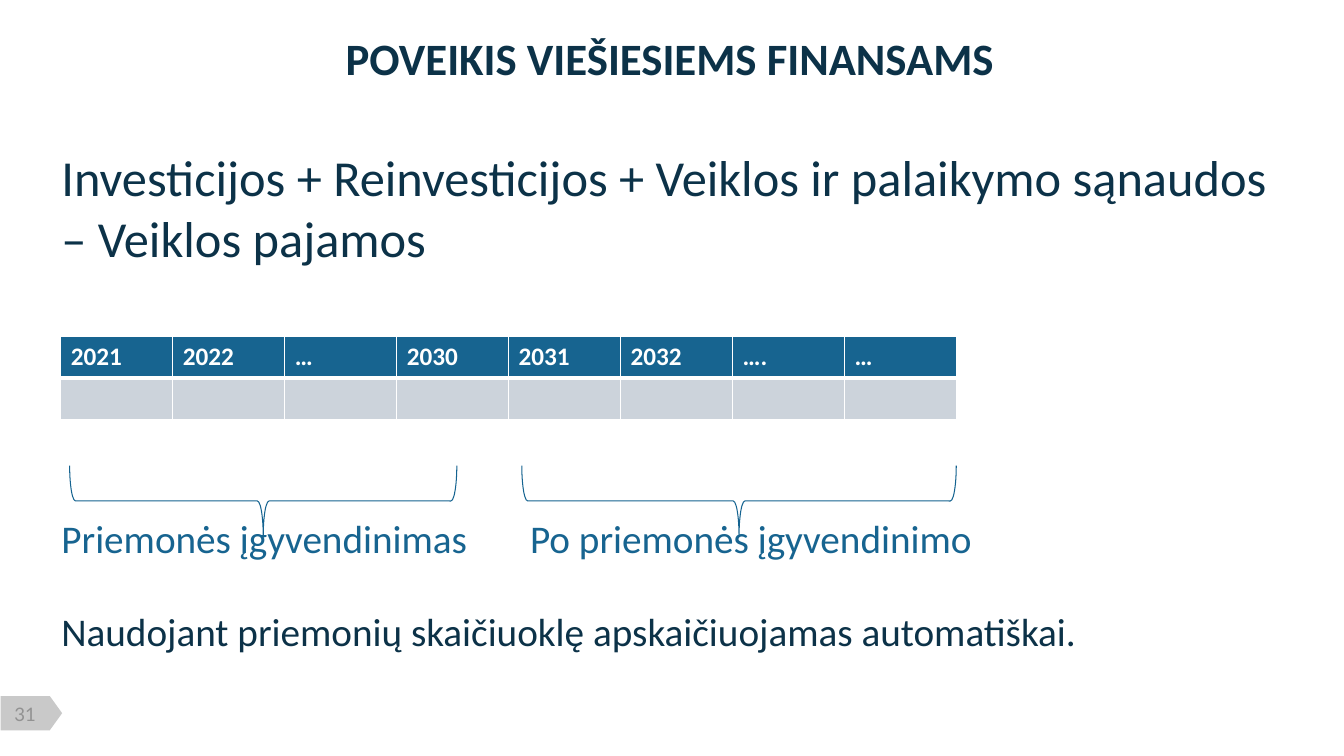
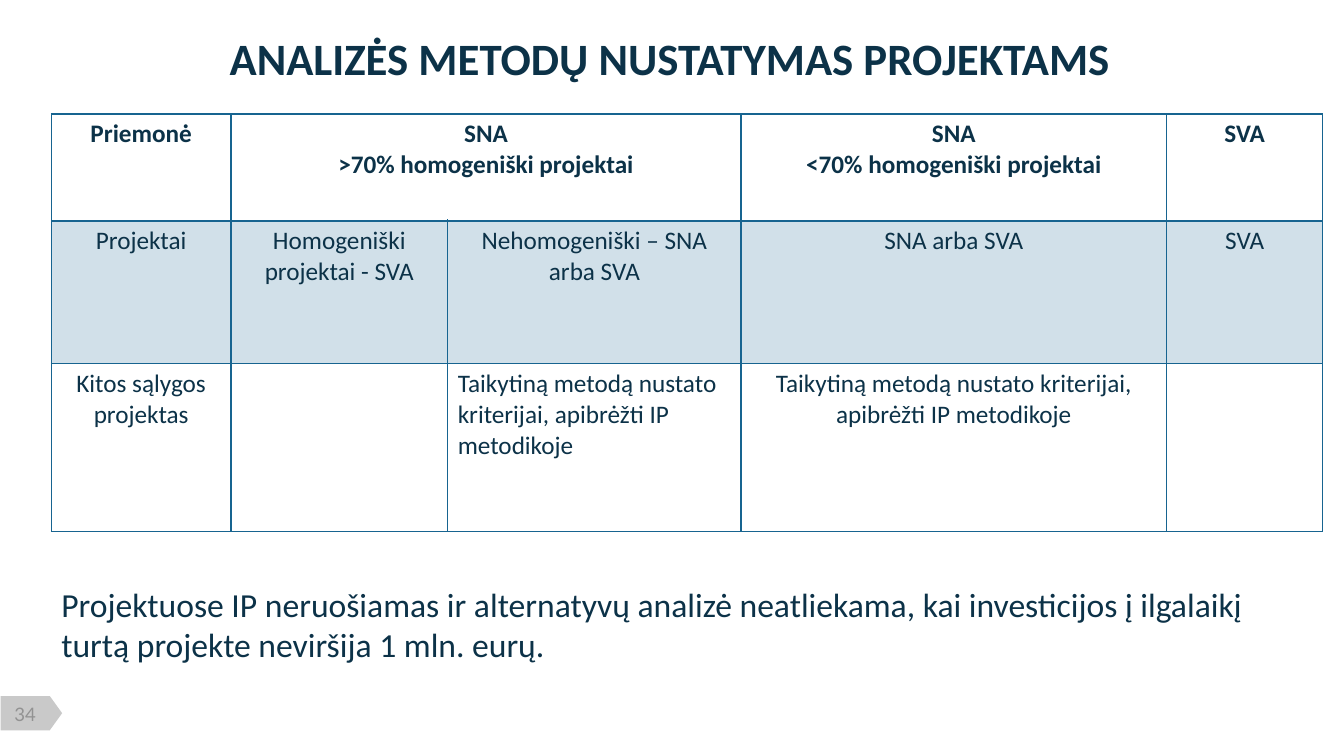
import dataclasses
import typing

import lxml.etree
import pptx
import pptx.dml.color
import pptx.enum.shapes
import pptx.enum.text
import pptx.oxml.ns
import pptx.slide
import pptx.table
import pptx.text.text
import pptx.util

WIDTH = pptx.util.Inches(13.33)
HEIGHT = pptx.util.Inches(7.5)

COLOURS = {
    "navy": "0C3248",
    "blue": "176490",
    "brace": "146390",
    "tint": "D1E0E9",
    "empty": "CCD3DB",
    "badge": "C9C9C9",
    "number": "929292",
    "white": "FFFFFF",
}

LEFT = pptx.enum.text.PP_ALIGN.LEFT
CENTER = pptx.enum.text.PP_ALIGN.CENTER
SHAPES = pptx.enum.shapes.MSO_SHAPE

# Shared left edge, text width and text height, in percent of the slide
MARGIN, TEXT_WIDTH, TEXT_HEIGHT = 3.83, 92.05, 11.47


class Area(typing.NamedTuple):
    """Left, top, width and height in percent of the slide's size."""
    left: float
    top: float
    width: float
    height: float

    def lengths(self) -> tuple[int, int, int, int]:
        return (across(self.left), down(self.top), across(self.width), down(self.height))


@dataclasses.dataclass(frozen=True)
class Style:
    size: float
    colour: str = "navy"
    bold: bool = False
    name: str = "Calibri"
    align: pptx.enum.text.PP_ALIGN = LEFT


@dataclasses.dataclass(frozen=True)
class Cell:
    text: str = ""
    span: int = 1
    align: pptx.enum.text.PP_ALIGN = CENTER


@dataclasses.dataclass(frozen=True)
class Row:
    height: float
    cells: list[Cell]
    colour: str = "navy"
    bold: bool = False
    fill: str | None = None


@dataclasses.dataclass(frozen=True)
class Grid:
    left: float
    top: float
    columns: list[float]
    rows: list[Row]
    border: str
    heavy: float


@dataclasses.dataclass(frozen=True)
class Phase:
    label: str
    label_left: float
    brace_left: float
    brace_width: float


TITLE = Style(32, bold=True, align=CENTER)
NUMBER = Style(13.3, "number", name="Lato", align=CENTER)


def across(share: float) -> int:
    return round(WIDTH * share / 100)


def down(share: float) -> int:
    return round(HEIGHT * share / 100)


def colour_of(name: str) -> pptx.dml.color.RGBColor:
    return pptx.dml.color.RGBColor.from_string(COLOURS[name])


def write(frame: pptx.text.text.TextFrame, text: str, style: Style) -> None:
    values = {"size": pptx.util.Pt(style.size), "bold": style.bold, "name": style.name}
    for index, line in enumerate(text.split("\n")):
        para = frame.add_paragraph() if index else frame.paragraphs[0]
        para.alignment = style.align
        if not line:
            para.font.size = values["size"]
            continue
        span = para.add_run()
        span.text = line
        for name, value in values.items():
            setattr(span.font, name, value)
        span.font.color.rgb = colour_of(style.colour)


def add_text(page: pptx.slide.Slide, area: Area, text: str, style: Style,
             **frame_values: typing.Any) -> None:
    frame = page.shapes.add_textbox(*area.lengths()).text_frame
    for name, value in ({"word_wrap": True} | frame_values).items():
        setattr(frame, name, value)
    write(frame, text, style)


def add_turned(page: pptx.slide.Slide, kind: SHAPES, area: Area, rotation: int,
               fill: str | None = None, line: str | None = None) -> None:
    """Draw a shape turned by a quarter so that it covers the area."""
    left, top, width, height = area.lengths()
    shift = (width - height) // 2
    shape = page.shapes.add_shape(kind, left + shift, top - shift, height, width)
    shape.rotation = rotation
    shape.shadow.inherit = False
    if fill:
        shape.fill.solid()
        shape.fill.fore_color.rgb = colour_of(fill)
    else:
        shape.fill.background()
    if line:
        shape.line.color.rgb = colour_of(line)
        shape.line.width = pptx.util.Pt(0.75)
    else:
        shape.line.fill.background()


def set_borders(cell: pptx.table._Cell, colour: str, widths: dict[str, float]) -> None:
    properties = cell._tc.get_or_add_tcPr()
    for side, width in widths.items():
        line = lxml.etree.SubElement(properties, pptx.oxml.ns.qn(f"a:ln{side}"),
                                     w=str(pptx.util.Pt(width)))
        solid = lxml.etree.SubElement(line, pptx.oxml.ns.qn("a:solidFill"))
        lxml.etree.SubElement(solid, pptx.oxml.ns.qn("a:srgbClr"), val=COLOURS[colour])


def add_grid(page: pptx.slide.Slide, grid: Grid) -> None:
    area = Area(grid.left, grid.top, sum(grid.columns), sum(row.height for row in grid.rows))
    table = page.shapes.add_table(len(grid.rows), len(grid.columns), *area.lengths()).table
    table.horz_banding = False
    for column, width in zip(table.columns, grid.columns):
        column.width = across(width)
    for index, row in enumerate(grid.rows):
        table.rows[index].height = down(row.height)
        # The rule under the header is heavier than the others
        widths = {"L": 1, "R": 1, "T": grid.heavy if index == 1 else 1,
                  "B": grid.heavy if index == 0 else 1}
        for box in table.rows[index].cells:
            set_borders(box, grid.border, widths)
            if row.fill:
                box.fill.solid()
                box.fill.fore_color.rgb = colour_of(row.fill)
            else:
                box.fill.background()
        position = 0
        for cell in row.cells:
            box = table.cell(index, position)
            if cell.span > 1:
                box.merge(table.cell(index, position + cell.span - 1))
            write(box.text_frame, cell.text,
                  Style(18, row.colour, row.bold, align=cell.align))
            position += cell.span


def add_page(deck: pptx.presentation.Presentation, title: str, number: int) -> pptx.slide.Slide:
    page = deck.slides.add_slide(deck.slide_layouts[6])
    # Page number on its arrow badge
    add_turned(page, SHAPES.FLOWCHART_OFFPAGE_CONNECTOR,
               Area(0.04, 92.07, 4.58, 4.53), 270, fill="badge")
    margins = {f"margin_{side}": 0 for side in ("left", "top", "right", "bottom")}
    add_text(page, Area(0.22, 92.93, 3.3, 2.93), str(number), NUMBER,
             vertical_anchor=pptx.enum.text.MSO_ANCHOR.MIDDLE, **margins)
    add_text(page, Area(MARGIN, 3.47, TEXT_WIDTH, TEXT_HEIGHT), title, TITLE)
    return page


def add_finance_page(deck: pptx.presentation.Presentation) -> None:
    page = add_page(deck, "POVEIKIS VIEŠIESIEMS FINANSAMS", 31)
    add_text(page, Area(MARGIN, 18.67, TEXT_WIDTH, 17.6),
             "Investicijos + Reinvesticijos + Veiklos ir palaikymo sąnaudos – Veiklos pajamos",
             Style(36))

    # Timeline of years
    years = ["2021", "2022", "…", "2030", "2031", "2032", "….", "…"]
    add_grid(page, Grid(4.53, 44.53, [8.33] * len(years), [
        Row(5.47, [Cell(year, align=LEFT) for year in years], "white", True, "blue"),
        Row(5.47, [Cell() for _ in years], fill="empty"),
    ], "white", 3))

    # Phases under the timeline
    for phase in (Phase("Priemonės įgyvendinimas", MARGIN, 5.18, 28.81),
                  Phase("Po priemonės įgyvendinimo", 38.7, 38.82, 32.33)):
        add_text(page, Area(phase.label_left, 67.33, 36, 7.6), phase.label, Style(28, "blue"))
        add_turned(page, SHAPES.RIGHT_BRACE,
                   Area(phase.brace_left, 61.6, phase.brace_width, 9.33), 90, line="brace")

    add_text(page, Area(MARGIN, 79.73, TEXT_WIDTH, 7.6),
             "Naudojant priemonių skaičiuoklę apskaičiuojamas automatiškai.", Style(28))


def add_methods_page(deck: pptx.presentation.Presentation) -> None:
    page = add_page(deck, "ANALIZĖS METODŲ NUSTATYMAS PROJEKTAMS", 34)
    criteria = "Taikytiną metodą nustato kriterijai, apibrėžti IP metodikoje"

    # Methods by measure and project
    add_grid(page, Grid(MARGIN, 15.07, [13.35, 16.13, 21.83, 31.66, 11.63], [
        Row(14.13, [Cell("Priemonė"), Cell("SNA\n>70% homogeniški projektai", span=2),
                    Cell("SNA\n<70% homogeniški projektai"), Cell("SVA")], bold=True),
        Row(18.93, [Cell("Projektai"), Cell("Homogeniški projektai - SVA"),
                    Cell("Nehomogeniški – SNA arba SVA"), Cell("SNA arba SVA"),
                    Cell("SVA")], fill="tint"),
        Row(22.13, [Cell("Kitos sąlygos projektas"), Cell(), Cell(criteria, align=LEFT),
                    Cell(criteria), Cell()]),
    ], "blue", 2))

    add_text(page, Area(MARGIN, 76.53, TEXT_WIDTH, TEXT_HEIGHT),
             "Projektuose IP neruošiamas ir alternatyvų analizė neatliekama, kai investicijos "
             "į ilgalaikį turtą projekte neviršija 1 mln. eurų.", Style(24))


def main() -> None:
    deck = pptx.Presentation()
    deck.slide_width, deck.slide_height = WIDTH, HEIGHT
    add_finance_page(deck)
    add_methods_page(deck)
    deck.save("out.pptx")


if __name__ == "__main__":
    main()
